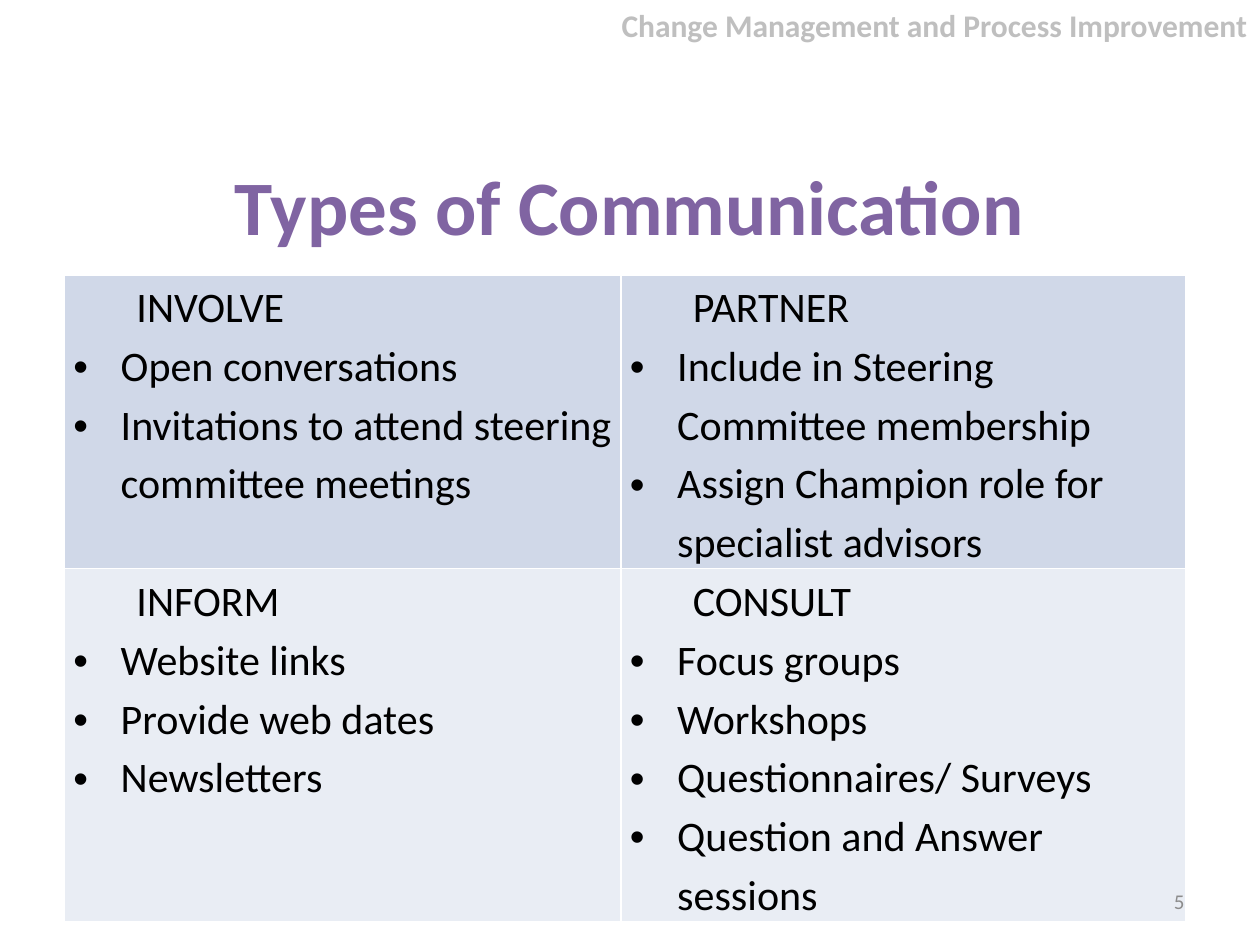
"""Build the "Types of Communication" slide."""
from dataclasses import dataclass

from lxml.etree import SubElement
from pptx import Presentation
from pptx.dml.color import RGBColor
from pptx.enum.text import MSO_ANCHOR, PP_ALIGN
from pptx.oxml.ns import qn
from pptx.slide import Slide
from pptx.table import _Cell
from pptx.text.text import _Paragraph
from pptx.util import Pt

FONT = "Calibri"
COLORS = {
    "header": "BFBFBF",
    "title": "8064A2",
    "body": "000000",
    "number": "8C8C8C",
    "border": "FFFFFF",
    "top_row": "D0D8E8",
    "bottom_row": "E9EDF4",
}


@dataclass
class Label:
    text: str
    left: float
    top: float
    width: float
    height: float
    size: float
    color: str
    align: PP_ALIGN = PP_ALIGN.RIGHT
    anchor: MSO_ANCHOR = MSO_ANCHOR.MIDDLE
    bold: bool = False


@dataclass
class Quadrant:
    heading: str
    items: list[str]


@dataclass
class Row:
    height: float
    fill: str
    quadrants: list[Quadrant]


LABELS = [
    Label("Change Management and Process Improvement", 326, 0, 394, 29, 18, "header",
          anchor=MSO_ANCHOR.TOP, bold=True),
    Label("Types of Communication", 36, 72, 648, 90, 44, "title",
          align=PP_ALIGN.CENTER, bold=True),
]
PAGE_NUMBER = Label("5", 516, 500.5, 168, 28.75, 12, "number")

COLUMN_WIDTHS = [318, 322.5]
ROWS = [
    Row(168, "top_row", [
        Quadrant("INVOLVE", ["Open conversations",
                             "Invitations to attend steering committee meetings"]),
        Quadrant("PARTNER", ["Include in Steering Committee membership",
                             "Assign Champion role for specialist advisors"]),
    ]),
    Row(201.5, "bottom_row", [
        Quadrant("INFORM", ["Website links", "Provide web dates", "Newsletters"]),
        Quadrant("CONSULT", ["Focus groups", "Workshops", "Questionnaires/ Surveys",
                             "Question and Answer sessions"]),
    ]),
]


def rgb(name: str) -> RGBColor:
    """Look up a named colour."""
    return RGBColor.from_string(COLORS[name])


def add_run(p: _Paragraph, text: str, size: float, color: str, bold: bool = False) -> None:
    """Append a formatted run to a paragraph."""
    r = p.add_run()
    r.text = text
    r.font.name = FONT
    r.font.size = Pt(size)
    r.font.bold = bold
    r.font.color.rgb = rgb(color)


def add_label(s: Slide, label: Label) -> None:
    """Draw one single-line text box."""
    sp = s.shapes.add_textbox(Pt(label.left), Pt(label.top), Pt(label.width), Pt(label.height))
    tf = sp.text_frame
    tf.word_wrap = True
    tf.vertical_anchor = label.anchor
    p = tf.paragraphs[0]
    p.alignment = label.align
    add_run(p, label.text, label.size, label.color, label.bold)


def set_indent(p: _Paragraph, margin: float, bullet: bool) -> None:
    """Set the left margin, with a hanging bullet if wanted."""
    pPr = p._p.get_or_add_pPr()
    pPr.set("marL", str(Pt(margin)))
    pPr.set("indent", str(Pt(-margin if bullet else 0)))
    if bullet:
        SubElement(pPr, qn("a:buFont"), typeface="Arial")
        SubElement(pPr, qn("a:buChar"), char="•")
    p.line_spacing = 1.15


def set_borders(cell: _Cell) -> None:
    """Give a cell thin lines on all four sides."""
    tcPr = cell._tc.get_or_add_tcPr()
    for side in ("a:lnL", "a:lnR", "a:lnT", "a:lnB"):
        ln = SubElement(tcPr, qn(side), w=str(Pt(1)))
        fill = SubElement(ln, qn("a:solidFill"))
        SubElement(fill, qn("a:srgbClr"), val=COLORS["border"])


def fill_cell(cell: _Cell, quadrant: Quadrant, fill: str) -> None:
    """Write a heading and its bullets into a cell."""
    set_borders(cell)
    cell.fill.solid()
    cell.fill.fore_color.rgb = rgb(fill)
    cell.margin_left = cell.margin_right = Pt(5)
    cell.margin_top = cell.margin_bottom = Pt(0)
    tf = cell.text_frame
    p = tf.paragraphs[0]
    set_indent(p, 36, bullet=False)
    add_run(p, quadrant.heading, 24, "body")
    for item in quadrant.items:
        p = tf.add_paragraph()
        set_indent(p, 27, bullet=True)
        add_run(p, item, 24, "body")


def add_quadrants(s: Slide) -> None:
    """Draw the table of communication types."""
    table = s.shapes.add_table(
        len(ROWS), len(COLUMN_WIDTHS), Pt(37), Pt(157),
        Pt(sum(COLUMN_WIDTHS)), Pt(sum(row.height for row in ROWS))).table
    table.first_row = table.horz_banding = False
    for column, width in zip(table.columns, COLUMN_WIDTHS):
        column.width = Pt(width)
    for i, row in enumerate(ROWS):
        table.rows[i].height = Pt(row.height)
        for j, quadrant in enumerate(row.quadrants):
            fill_cell(table.cell(i, j), quadrant, row.fill)


def main() -> None:
    """Build and save the slide."""
    prs = Presentation()
    prs.slide_width, prs.slide_height = Pt(720), Pt(540)
    s = prs.slides.add_slide(prs.slide_layouts[6])
    for label in LABELS:
        add_label(s, label)
    add_quadrants(s)
    add_label(s, PAGE_NUMBER)
    prs.save("out.pptx")


if __name__ == "__main__":
    main()
